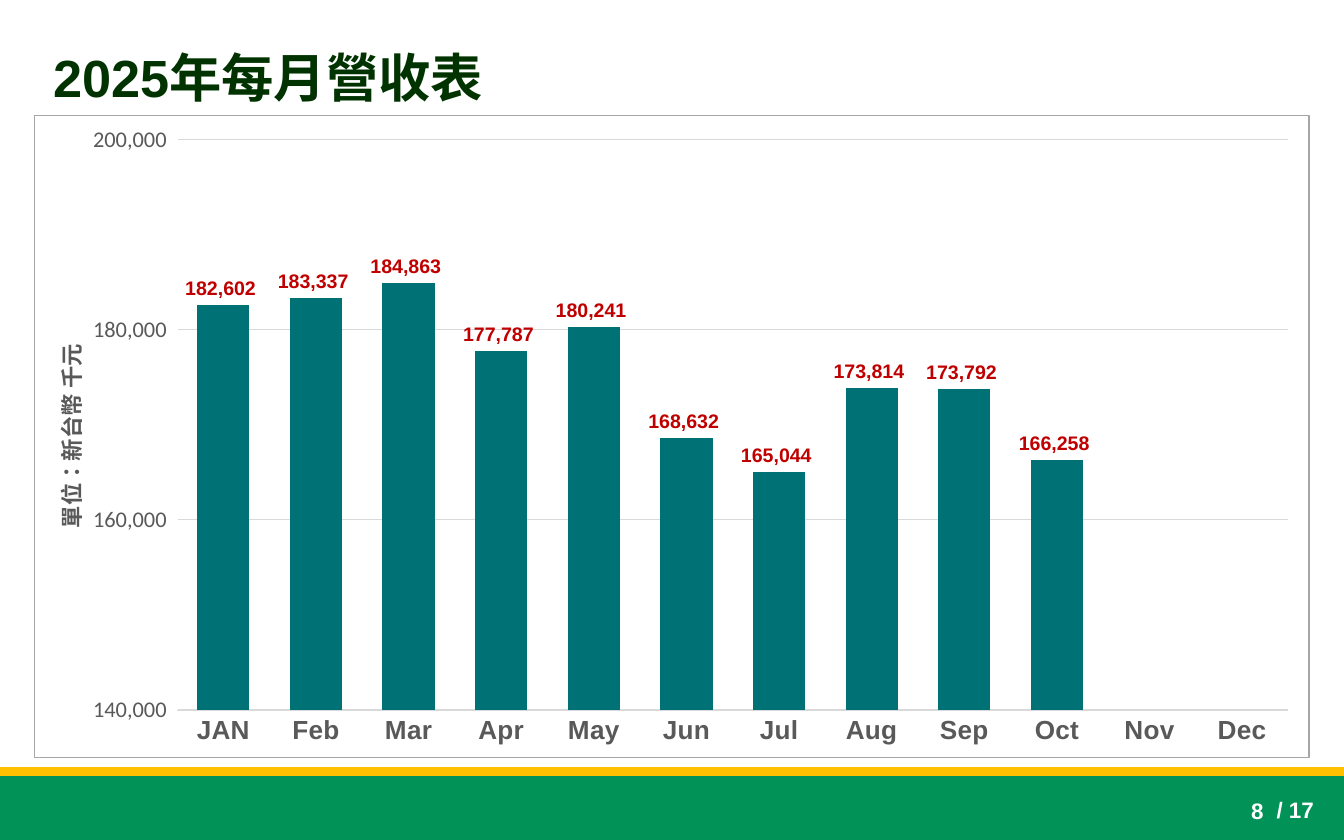
"""Build the monthly revenue slide for 2025."""
from dataclasses import dataclass

from lxml import etree
from pptx import Presentation
from pptx import util as u
from pptx.chart import data
from pptx.dml import color
from pptx.enum import chart as ch, shapes, text
from pptx.oxml import ns, parse_xml

COLORS = {
    "title": "003300", "green": "009257", "gold": "FFC000", "white": "FFFFFF",
    "bar": "007174", "value": "C00000", "axis": "595959", "grid": "D9D9D9",
    "border": "A6A6A6", "black": "000000",
}
NUMBER_FORMAT = r"#,##0_);[Red]\(#,##0\)"
MONTHS = ["JAN", "Feb", "Mar", "Apr", "May", "Jun",
          "Jul", "Aug", "Sep", "Oct", "Nov", "Dec"]
REVENUE = [182602, 183337, 184863, 177787, 180241, 168632,
           165044, 173814, 173792, 166258, None, None]


@dataclass(frozen=True)
class Box:
    left: float
    top: float
    width: float
    height: float

    def lengths(self) -> tuple:
        return tuple(u.Pt(v) for v in (self.left, self.top, self.width, self.height))


@dataclass(frozen=True)
class Band:
    box: Box
    color: str


@dataclass(frozen=True)
class Label:
    box: Box
    words: str
    align: text.PP_ALIGN
    anchor: text.MSO_ANCHOR
    wrap: bool


BANDS = [Band(Box(0, 415.5, 720, 34), "green"), Band(Box(0, 412, 720, 3), "gold")]
PAGE_LABELS = [
    Label(Box(676.8, 423, 34.6, 21.6), "/ 17",
          text.PP_ALIGN.LEFT, text.MSO_ANCHOR.TOP, False),
    Label(Box(516.2, 422, 167.8, 24), "8",
          text.PP_ALIGN.RIGHT, text.MSO_ANCHOR.MIDDLE, True),
]


def rgb(name: str) -> color.RGBColor:
    return color.RGBColor.from_string(COLORS[name])


def style(font, size: float, shade: str, bold: bool = True, face: str = "Arial") -> None:
    font.name, font.size, font.bold = face, u.Pt(size), bold
    font.color.rgb = rgb(shade)


def outline(line, shade: str, width: float = 0.75) -> None:
    line.color.rgb = rgb(shade)
    line.width = u.Pt(width)


def draw_band(slide, band: Band) -> None:
    stripe = slide.shapes.add_shape(shapes.MSO_SHAPE.RECTANGLE, *band.box.lengths())
    stripe.shadow.inherit = False
    stripe.fill.solid()
    stripe.fill.fore_color.rgb = rgb(band.color)
    outline(stripe.line, band.color, 2)


def draw_label(slide, label: Label) -> None:
    frame = slide.shapes.add_textbox(*label.box.lengths()).text_frame
    frame.word_wrap = label.wrap
    frame.vertical_anchor = label.anchor
    line = frame.paragraphs[0]
    line.alignment = label.align
    run = line.add_run()
    run.text = label.words
    style(run.font, 12, "white")


def draw_title(slide, box: Box, words: str) -> None:
    heading = slide.shapes.title
    heading.left, heading.top, heading.width, heading.height = box.lengths()
    frame = heading.text_frame
    frame.word_wrap = False
    frame.auto_size = text.MSO_AUTO_SIZE.NONE
    frame.vertical_anchor = text.MSO_ANCHOR.TOP
    frame.margin_left = u.Pt(15)
    line = frame.paragraphs[0]
    line.alignment = text.PP_ALIGN.LEFT
    run = line.add_run()
    run.text = words
    style(run.font, 28, "title")


def manual_layout(inner: bool = False, **places: float):
    """Return a chart layout element with edge positions."""
    layout = parse_xml(f'<c:layout {ns.nsdecls("c")}><c:manualLayout/></c:layout>')
    values = {"layoutTarget": "inner"} if inner else {}
    values |= {"xMode": "edge", "yMode": "edge"} | places
    for tag, value in values.items():
        etree.SubElement(layout[0], ns.qn(f"c:{tag}")).set("val", str(value))
    return layout


def replace_layout(parent, layout, position: int) -> None:
    for old in parent.findall(ns.qn("c:layout")):
        parent.remove(old)
    parent.insert(position, layout)


def style_axes(chart) -> None:
    months, amounts = chart.category_axis, chart.value_axis
    for axis, line in ((months, "grid"), (amounts, "white")):
        axis.major_tick_mark = axis.minor_tick_mark = ch.XL_TICK_MARK.NONE
        outline(axis.format.line, line)
    style(months.tick_labels.font, 14, "axis")
    style(amounts.tick_labels.font, 12, "axis", False, "Calibri")
    amounts.minimum_scale, amounts.maximum_scale = 140000, 200000
    amounts.major_unit = 20000
    outline(amounts.major_gridlines.format.line, "grid")
    amounts.tick_labels.number_format = NUMBER_FORMAT
    amounts.tick_labels.number_format_is_linked = False
    unit = amounts.axis_title
    run = unit.text_frame.paragraphs[0].add_run()
    run.text = "單位：新台幣 千元"
    style(run.font, 12, "axis", face="Calibri")
    run._r.get_or_add_rPr().set("lang", "zh-TW")
    unit.text_frame._txBody.bodyPr.set("rot", "-5400000")
    unit.text_frame._txBody.bodyPr.set("vert", "horz")
    replace_layout(unit._element, manual_layout(x=0.01, y=0.35), 1)


def draw_chart(slide, box: Box) -> None:
    figures = data.CategoryChartData(number_format=NUMBER_FORMAT)
    figures.categories = MONTHS
    figures.add_series("Series 1", REVENUE)
    chart = slide.shapes.add_chart(
        ch.XL_CHART_TYPE.COLUMN_CLUSTERED, *box.lengths(), figures).chart
    chart.has_title = chart.has_legend = False
    style(chart.font, 10, "black", False, "Calibri")
    style_axes(chart)

    plot = chart.plots[0]
    plot.gap_width = 77
    plot.vary_by_categories = False
    revenue = plot.series[0]
    revenue.format.fill.solid()
    revenue.format.fill.fore_color.rgb = rgb("bar")
    labels = revenue.data_labels
    labels.show_value = True
    labels.position = ch.XL_LABEL_POSITION.OUTSIDE_END
    labels.number_format = NUMBER_FORMAT
    labels.number_format_is_linked = False
    style(labels.font, 10.5, "value")

    space = chart._chartSpace
    area = space.find(ns.qn("c:chart"))
    replace_layout(area.find(ns.qn("c:plotArea")),
                   manual_layout(True, x=0.112, y=0.037, w=0.872, h=0.889), 0)
    area.addnext(parse_xml(
        f'<c:spPr {ns.nsdecls("c", "a")}><a:solidFill><a:srgbClr val="{COLORS["white"]}"/>'
        f'</a:solidFill><a:ln w="{u.Pt(0.75)}"><a:solidFill>'
        f'<a:srgbClr val="{COLORS["border"]}"/></a:solidFill></a:ln></c:spPr>'))


def main() -> None:
    deck = Presentation()
    deck.slide_width, deck.slide_height = u.Pt(720), u.Pt(450)
    slide = deck.slides.add_slide(deck.slide_layouts[5])
    for band in BANDS:
        draw_band(slide, band)
    for label in PAGE_LABELS:
        draw_label(slide, label)
    draw_title(slide, Box(13.7, 20.9, 283.7, 41), "2025年每月營收表")
    draw_chart(slide, Box(18, 61.6, 683.6, 344.7))
    deck.save("out.pptx")


if __name__ == "__main__":
    main()
